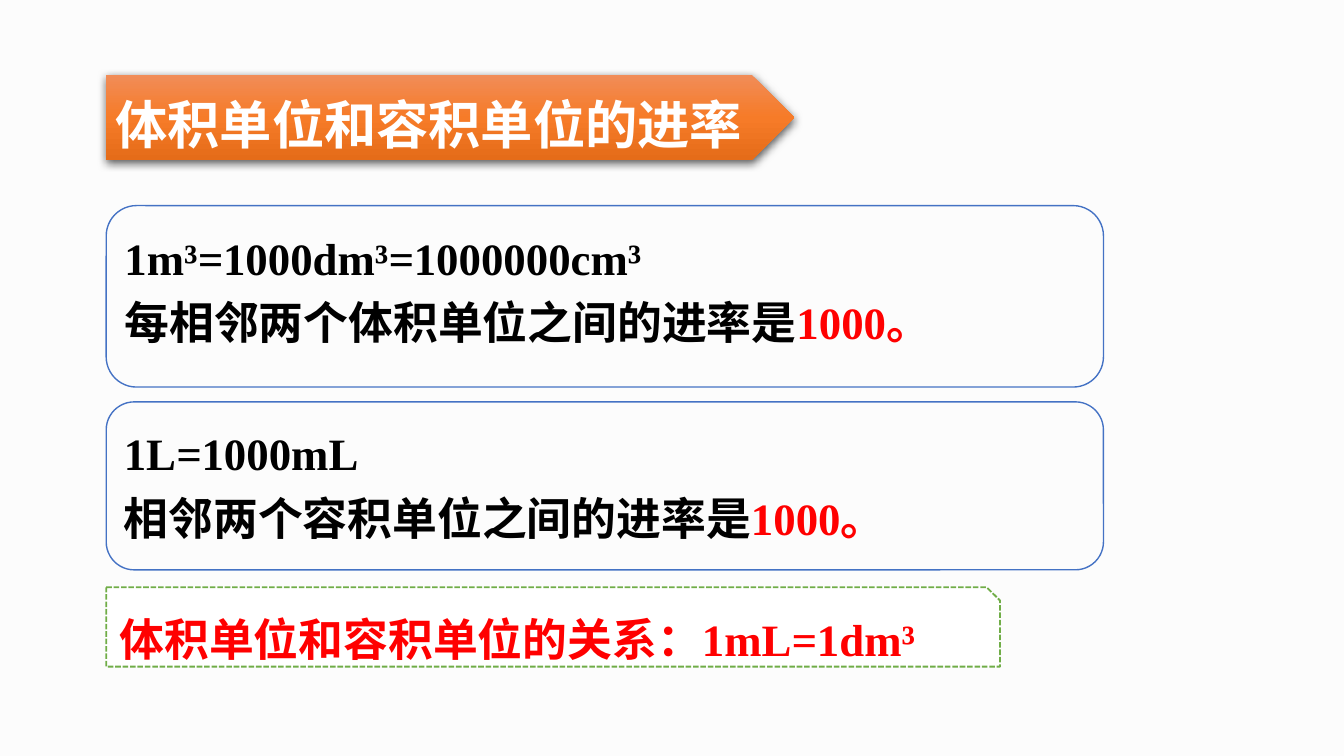
from dataclasses import dataclass

from lxml.etree import SubElement
from pptx import Presentation
from pptx.dml.color import RGBColor
from pptx.enum.dml import MSO_LINE
from pptx.enum.shapes import MSO_SHAPE
from pptx.enum.text import MSO_ANCHOR, MSO_AUTO_SIZE, PP_ALIGN
from pptx.oxml import parse_xml
from pptx.oxml.ns import nsdecls, qn
from pptx.util import Inches, Pt


@dataclass(frozen=True)
class Theme:
    background: str = "FCFCFC"
    white: str = "FFFFFF"
    ink: str = "000000"
    accent: str = "FF0000"
    blue: str = "4472C4"
    green: str = "70AD47"
    banner: tuple = ((0, "F18C57"), (50, "F67B28"), (100, "E56C19"))
    title_size: int = 28
    body_size: int = 24
    chinese_font: str = "Noto Sans CJK SC"
    body_font: str = "Times New Roman"


THEME = Theme()
LEFT = 0.79


def rgb(value):
    return RGBColor.from_string(value)


def add_run(paragraph, text, color, size=THEME.body_size, font=THEME.body_font, italic=False):
    run = paragraph.add_run()
    run.text = text
    values = {"name": font, "size": Pt(size), "bold": True, "italic": italic}
    for key, value in values.items():
        setattr(run.font, key, value)
    run.font.color.rgb = rgb(color)
    SubElement(run.font._element, qn("a:ea"), typeface=THEME.chinese_font)


def add_formula(paragraph, text, color):
    """Write an equation with its equals signs in italics."""
    for index, part in enumerate(text.split("=")):
        if index:
            add_run(paragraph, "=", color, italic=True)
        add_run(paragraph, part, color)


def format_frame(frame, anchor, inset_x=0.07, inset_y=0.04):
    values = {
        "word_wrap": True,
        "auto_size": MSO_AUTO_SIZE.NONE,
        "vertical_anchor": anchor,
        "margin_left": Inches(inset_x),
        "margin_right": Inches(inset_x),
        "margin_top": Inches(inset_y),
        "margin_bottom": Inches(inset_y),
    }
    for key, value in values.items():
        setattr(frame, key, value)


def format_paragraph(paragraph):
    values = {"alignment": PP_ALIGN.LEFT, "line_spacing": 1.2, "space_before": Pt(0)}
    for key, value in values.items():
        setattr(paragraph, key, value)
    return paragraph


def add_panel(slide, kind, top, width, height):
    panel = slide.shapes.add_shape(
        kind, Inches(LEFT), Inches(top), Inches(width), Inches(height))
    panel.shadow.inherit = False
    panel.fill.background()
    panel.line.fill.background()
    return panel


def outline(panel, color, width):
    panel.line.color.rgb = rgb(color)
    panel.line.width = Pt(width)


def add_banner(slide, text):
    banner = add_panel(slide, MSO_SHAPE.PENTAGON, 0.56, 5.12, 0.63)
    properties = banner._element.spPr
    stops = "".join(
        f'<a:gs pos="{position * 1000}"><a:srgbClr val="{color}"/></a:gs>'
        for position, color in THEME.banner)
    properties.replace(properties.find(qn("a:noFill")), parse_xml(
        f'<a:gradFill {nsdecls("a")}><a:gsLst>{stops}</a:gsLst>'
        '<a:lin ang="5400000" scaled="0"/></a:gradFill>'))
    properties.find(qn("a:effectLst")).append(parse_xml(
        f'<a:outerShdw {nsdecls("a")} blurRad="{Pt(4.5)}" dist="{Pt(1.5)}" '
        f'dir="5400000" rotWithShape="0"><a:srgbClr val="{THEME.ink}">'
        '<a:alpha val="63000"/></a:srgbClr></a:outerShdw>'))
    format_frame(banner.text_frame, MSO_ANCHOR.MIDDLE)
    paragraph = format_paragraph(banner.text_frame.paragraphs[0])
    add_run(paragraph, text, THEME.white, THEME.title_size, THEME.chinese_font)


def add_rate_card(slide, top, height, formula, statement):
    card = add_panel(slide, MSO_SHAPE.ROUNDED_RECTANGLE, top, 7.42, height)
    outline(card, THEME.blue, 0.75)
    frame = card.text_frame
    format_frame(frame, MSO_ANCHOR.TOP)
    add_formula(format_paragraph(frame.paragraphs[0]), formula, THEME.ink)
    conclusion = format_paragraph(frame.add_paragraph())
    for text, color in ((statement, THEME.ink), ("1000。", THEME.accent)):
        add_run(conclusion, text, color)


def add_relation(slide, text):
    note = add_panel(slide, MSO_SHAPE.SNIP_1_RECTANGLE, 4.37, 6.65, 0.59)
    note.fill.solid()
    note.fill.fore_color.rgb = rgb(THEME.white)
    outline(note, THEME.green, 1)
    note.line.dash_style = MSO_LINE.SQUARE_DOT
    format_frame(note.text_frame, MSO_ANCHOR.MIDDLE, 0.1, 0.05)
    note.text_frame.margin_top = Inches(0.09)
    add_formula(format_paragraph(note.text_frame.paragraphs[0]), text, THEME.accent)


def main():
    presentation = Presentation()
    presentation.slide_width = Inches(10)
    presentation.slide_height = Inches(10) * 9 // 16
    slide = presentation.slides.add_slide(presentation.slide_layouts[6])
    slide.background.fill.solid()
    slide.background.fill.fore_color.rgb = rgb(THEME.background)

    # Heading
    add_banner(slide, "体积单位和容积单位的进率")

    # Conversion rates for volume and capacity
    add_rate_card(slide, 1.53, 1.35, "1m³=1000dm³=1000000cm³",
                  "每相邻两个体积单位之间的进率是")
    add_rate_card(slide, 2.99, 1.25, "1L=1000mL",
                  "相邻两个容积单位之间的进率是")

    # Link between the two kinds of unit
    add_relation(slide, "体积单位和容积单位的关系：1mL=1dm³")

    presentation.save("out.pptx")


if __name__ == "__main__":
    main()
